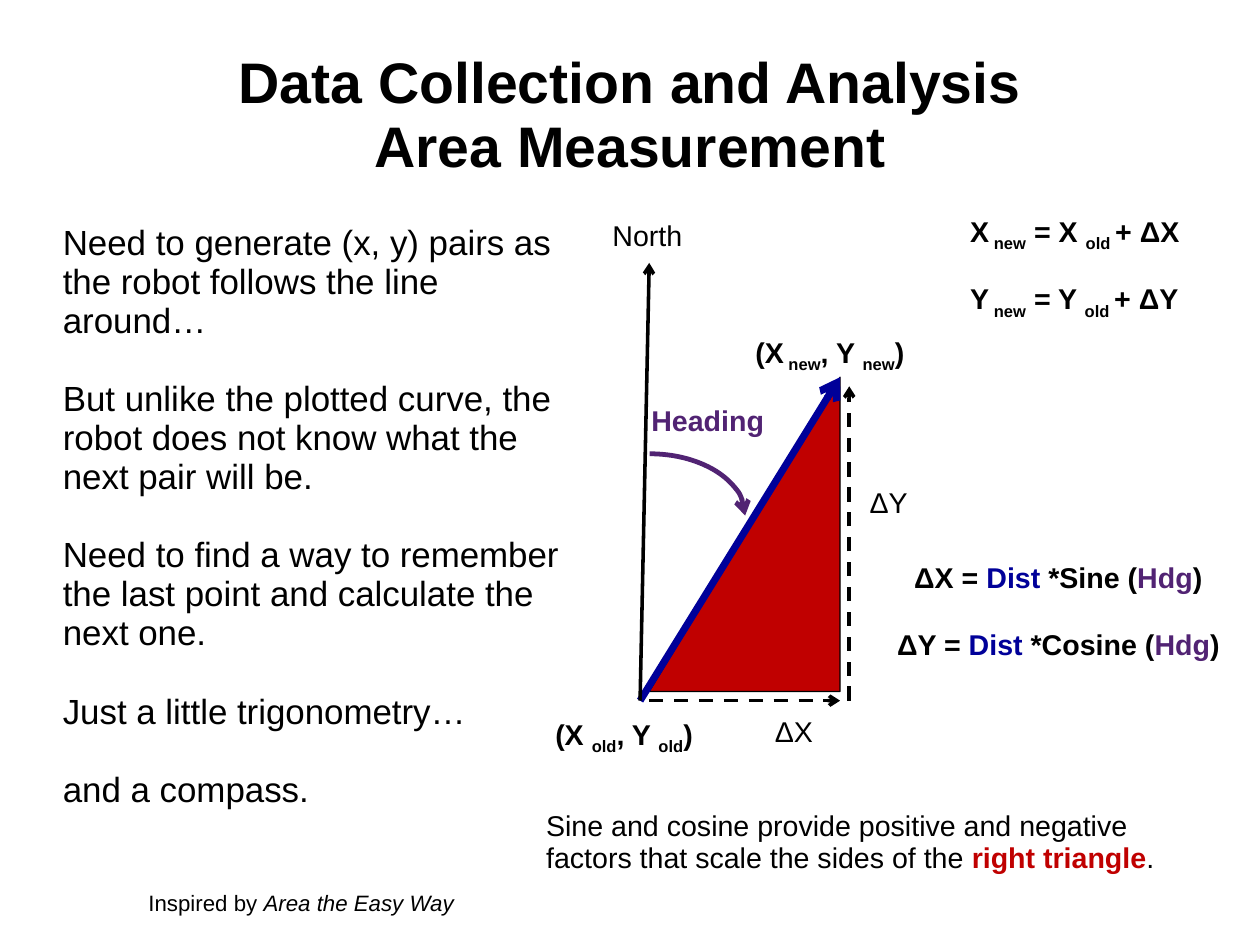
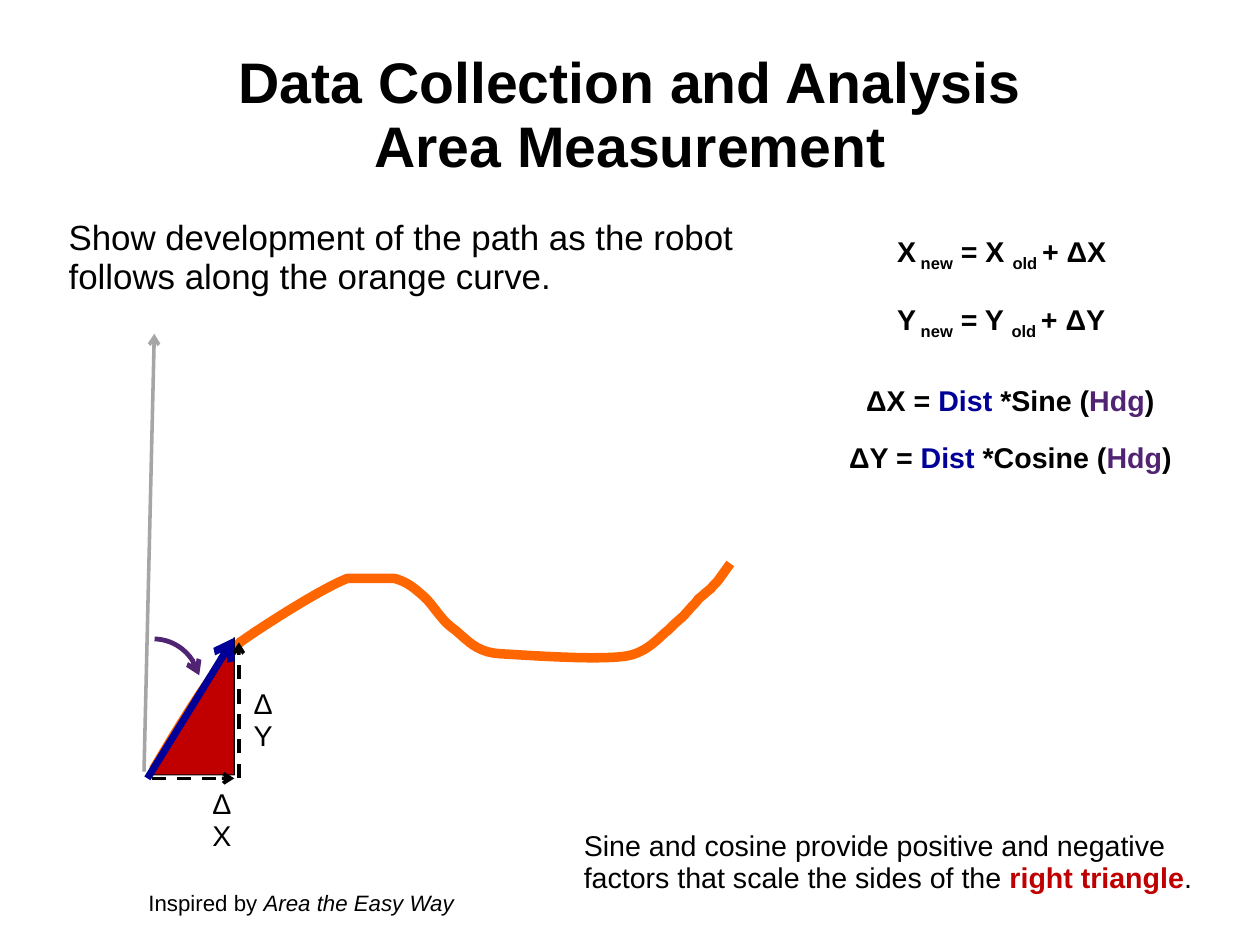
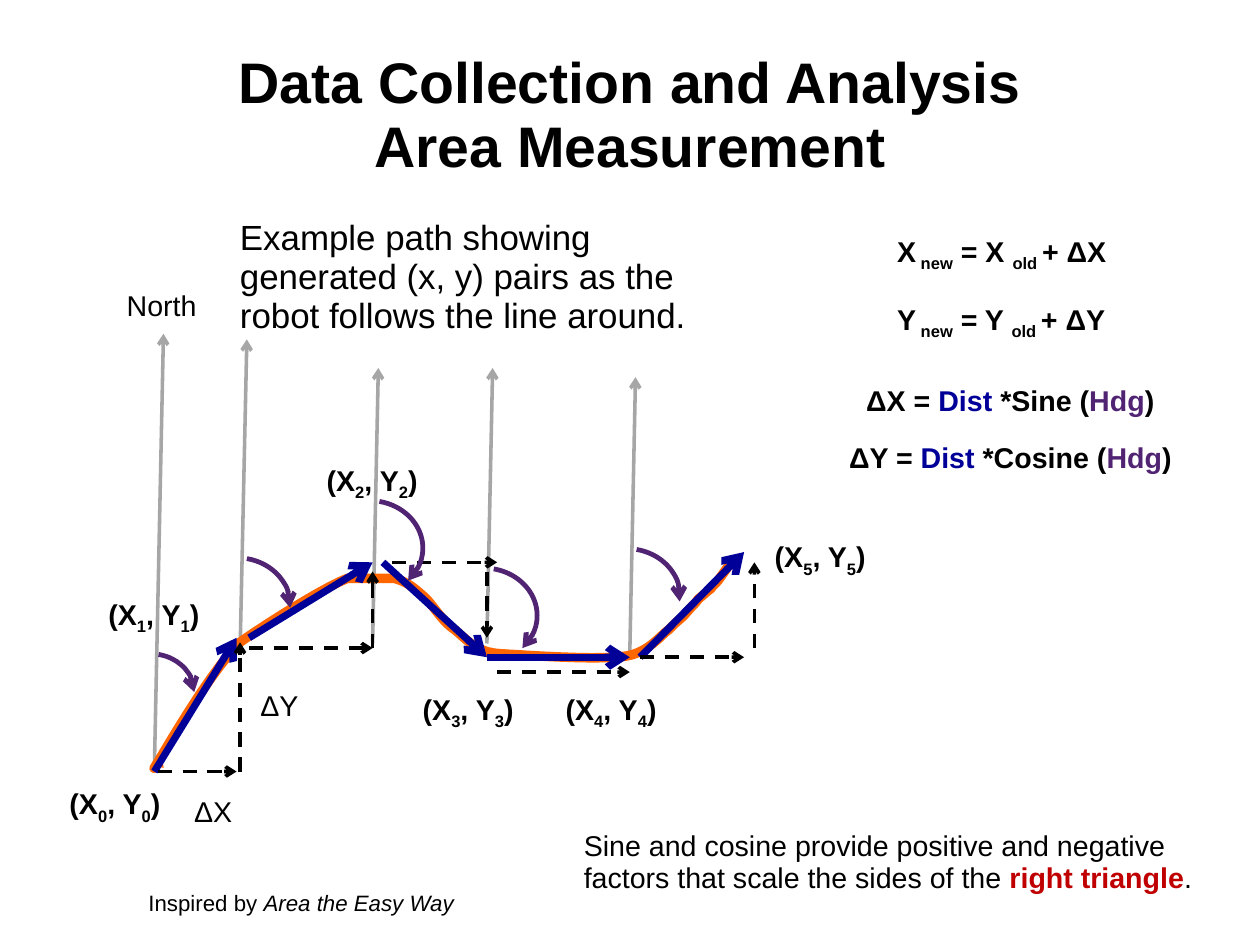
from lxml import etree
from pptx import Presentation
from pptx.dml.color import RGBColor as Rgb
from pptx.enum.dml import MSO_LINE as Dash
from pptx.enum.shapes import MSO_CONNECTOR as Link, MSO_SHAPE as Shape
from pptx.enum.text import MSO_ANCHOR as Anchor, PP_ALIGN as Align
from pptx.oxml.ns import qn
from pptx.util import Inches, Pt

# 28 by 21 cm
WIDTH, HEIGHT = Inches(28 / 2.54), Inches(21 / 2.54)
COLORS = {
    "black": "000000",
    "blue": "000099",
    "purple": "512373",
    "red": "C00000",
    "orange": "FF6600",
    "grey": "A6A6A6",
}
FONT = "Arial"
TITLE = ("Data Collection and Analysis", "Area Measurement")

# color, width in points, dashed
ARROWS = {
    "axis": ("black", 2.25, False),
    "north": ("grey", 2.25, False),
    "move": ("blue", 4.5, False),
    "delta": ("black", 2.25, True),
    "turn": ("purple", 3, False),
}

# Each part lists one point (straight) or three points (cubic curve).
START = (1.39, 6.71)
TRACK = [
    [(1.4, 6.69), (1.34, 6.73), (1.35, 6.72)],
    [(1.46, 6.54), (1.83, 5.89), (2.1, 5.62)],
    [(2.28, 5.49), (2.81, 5.15), (3.04, 5.06)],
    [(3.45, 5.06)],
    [(3.56, 5.09), (3.62, 5.14), (3.71, 5.22)],
    [(3.79, 5.29), (3.86, 5.43), (3.98, 5.51)],
    [(4.09, 5.6), (4.17, 5.71), (4.38, 5.72)],
    [(4.58, 5.73), (5.23, 5.78), (5.48, 5.74)],
    [(5.67, 5.71), (5.78, 5.56), (5.85, 5.51)],
    [(5.9, 5.46)],
    [(5.98, 5.39)],
    [(6.06, 5.3)],
    [(6.08, 5.28), (6.1, 5.26), (6.11, 5.24)],
    [(6.14, 5.22), (6.19, 5.17), (6.22, 5.15)],
    [(6.24, 5.12), (6.27, 5.1), (6.29, 5.07)],
    [(6.39, 4.93)],
]


def rgb(name):
    return Rgb.from_string(COLORS[name])


def add_run(para, text, size, color="black", bold=False, italic=False, sub=False):
    run = para.add_run()
    run.text = text
    font = run.font
    font.name, font.size, font.bold, font.italic = FONT, Pt(size), bold, italic
    font.color.rgb = rgb(color)
    if sub:
        run._r.get_or_add_rPr().set("baseline", "-25000")


def add_text(slide, box, paras, size=18, bold=False, align=Align.LEFT, gap=0,
             insets=(0.1, 0.05), anchor=Anchor.TOP):
    """Each paragraph is a list of runs: plain text or (text, style)."""
    frame = slide.shapes.add_textbox(*map(Inches, box)).text_frame
    frame.word_wrap = True
    frame.vertical_anchor = anchor
    frame.margin_left = frame.margin_right = Inches(insets[0])
    frame.margin_top = frame.margin_bottom = Inches(insets[1])
    for i, runs in enumerate(paras):
        para = frame.add_paragraph() if i else frame.paragraphs[0]
        para.alignment = align
        para.line_spacing = 0.93
        if i:
            para.space_before = Pt(gap)
        for item in runs:
            text, style = (item, {}) if isinstance(item, str) else item
            add_run(para, text, size, **{"bold": bold, **style})
    return frame


def add_title(slide):
    frame = add_text(slide, (0.55, 0.33, 9.92, 1.38), [[TITLE[0]]], 36, True,
                     Align.CENTER, insets=(0, 0), anchor=Anchor.MIDDLE)
    para = frame.paragraphs[0]
    para.add_line_break()
    add_run(para, TITLE[1], 36, bold=True)


def add_body(slide, box, *texts):
    add_text(slide, box, [[text] for text in texts], 22, gap=24.8,
             insets=(0, 0.03))


def add_label(slide, left, top, text, width=0.95, **style):
    add_text(slide, (left, top, width, 0.38), [[(text, style)]])


def sub(text):
    return text, {"sub": True}


def add_point(slide, left, top, x, x_sub, y, y_sub):
    """Label a point with its subscripted pair."""
    runs = [x, sub(x_sub), y, sub(y_sub), ")"]
    add_text(slide, (left, top, 1.83, 0.38), [runs], bold=True)


def add_sums(slide, left, top):
    rows = [[v, sub(" new"), f" = {v} ", sub("old "), f"+ Δ{v}"] for v in "XY"]
    add_text(slide, (left, top, 2.2, 1.23), rows, bold=True, gap=19.8)


def add_trig(slide, left, top, step):
    """Place the sine row, and the cosine row below and a little left."""
    for i, (axis, func) in enumerate([("X", "Sine"), ("Y", "Cosine")]):
        runs = [f"Δ{axis} = ", ("Dist", {"color": "blue"}), f" *{func} (",
                ("Hdg", {"color": "purple"}), ")"]
        box = (left - 0.15 * i, top + step * i, 3.15, 0.38)
        add_text(slide, box, [runs], bold=True)


def add_note(slide, left, top):
    runs = ["Sine and cosine provide positive and negative factors that scale "
            "the sides of the",
            (" right triangle", {"color": "red", "bold": True}), "."]
    add_text(slide, (left, top, 5.83, 0.66), [runs])


def set_line(line, color, width):
    line.color.rgb = rgb(color)
    line.width = Pt(width)


def style_arrow(shape, kind):
    color, width, dashed = ARROWS[kind]
    set_line(shape.line, color, width)
    if dashed:
        shape.line.dash_style = Dash.DASH
    ln = shape.line._get_or_add_ln()
    etree.SubElement(ln, qn("a:tailEnd")).set("type", "arrow")


def add_arrow(slide, kind, x1, y1, x2, y2):
    link = slide.shapes.add_connector(
        Link.STRAIGHT, *map(Inches, (x1, y1, x2, y2)))
    style_arrow(link, kind)
    etree.SubElement(link._element.spPr, qn("a:effectLst"))


def add_turn(slide, box, start=270, end=0):
    """Draw a heading arc between two angles in degrees."""
    arc = slide.shapes.add_shape(Shape.ARC, *map(Inches, box))
    arc.shadow.inherit = False
    arc.fill.background()
    # The preset holds 60000ths of a degree; adjustments count 100000ths.
    arc.adjustments[0] = start * 0.6
    arc.adjustments[1] = end * 0.6
    style_arrow(arc, "turn")


def add_wedge(slide, box):
    wedge = slide.shapes.add_shape(Shape.ISOSCELES_TRIANGLE, *map(Inches, box))
    wedge.adjustments[0] = 1
    wedge.shadow.inherit = False
    wedge.fill.solid()
    wedge.fill.fore_color.rgb = rgb("red")
    set_line(wedge.line, "black", 0.75)


def cubic(ends, steps=10):
    """Return points along a cubic curve, without its first point."""
    found = []
    for i in range(1, steps + 1):
        t = i / steps
        parts = ((1 - t) ** 3, 3 * t * (1 - t) ** 2, 3 * t * t * (1 - t), t ** 3)
        found.append(tuple(sum(k * end[n] for k, end in zip(parts, ends))
                           for n in (0, 1)))
    return found


def add_track(slide):
    points = [START]
    for part in TRACK:
        points += part if len(part) == 1 else cubic([points[-1], *part])
    spots = [(Inches(x), Inches(y)) for x, y in points]
    build = slide.shapes.build_freeform(*spots[0], scale=1.0)
    build.add_line_segments(spots[1:], close=False)
    track = build.convert_to_shape()
    track.shadow.inherit = False
    track.fill.background()
    set_line(track.line, "orange", 6)


def new_slide(deck):
    slide = deck.slides.add_slide(deck.slide_layouts[6])
    add_title(slide)
    credit = ["Inspired by ", ("Area the Easy Way", {"italic": True})]
    add_text(slide, (0.26, 7.75, 4.75, 0.3), [credit], 14, align=Align.CENTER)
    return slide


def add_rules(slide):
    add_sums(slide, 7.75, 2)
    add_trig(slide, 7.48, 3.33, 0.5)
    add_note(slide, 5.01, 7.22)


def show_trig(deck):
    slide = new_slide(deck)
    add_body(slide, (0.55, 1.93, 4.46, 5.45),
             "Need to generate (x, y) pairs as the robot follows the line around…",
             "But unlike the plotted curve, the robot does not know what the "
             "next pair will be.",
             "Need to find a way to remember the last point and calculate the "
             "next one.",
             "Just a little trigonometry…",
             "and a compass.")
    add_point(slide, 6.51, 2.88, "(X", " new", ", Y ", "new")
    add_wedge(slide, (5.68, 3.3, 1.67, 2.75))
    add_arrow(slide, "move", 5.6, 6.13, 7.35, 3.3)
    add_point(slide, 4.76, 6.22, "(X ", "old", ", Y ", "old")
    add_arrow(slide, "axis", 5.6, 6.13, 5.68, 2.3)
    add_label(slide, 5.26, 1.88, "North")
    add_turn(slide, (4.85, 3.97, 1.67, 1.08))
    add_label(slide, 5.6, 3.5, "Heading", 1.58, color="purple", bold=True)
    add_arrow(slide, "delta", 5.68, 6.13, 7.35, 6.13)
    add_arrow(slide, "delta", 7.43, 6.13, 7.43, 3.38)
    add_label(slide, 6.68, 6.22, "ΔX")
    add_label(slide, 7.51, 4.22, "ΔY")
    add_sums(slide, 8.39, 1.82)
    add_trig(slide, 7.9, 4.88, 0.58)
    add_note(slide, 4.68, 7.05)


def show_step(deck):
    slide = new_slide(deck)
    add_track(slide)
    add_body(slide, (0.6, 1.89, 6.75, 0.83),
             "Show development of the path as the robot follows along the "
             "orange curve.")
    add_rules(slide)
    add_wedge(slide, (1.33, 5.58, 0.72, 1.2))
    add_arrow(slide, "move", 1.29, 6.81, 2.05, 5.58)
    add_turn(slide, (0.93, 5.59, 0.83, 0.88), 271.07, 342.99)
    add_arrow(slide, "delta", 1.33, 6.81, 2.05, 6.81)
    add_arrow(slide, "delta", 2.09, 6.81, 2.09, 5.62)
    add_label(slide, 1.76, 6.85, "ΔX", 0.38)
    add_label(slide, 2.12, 5.98, "ΔY", 0.38)
    add_arrow(slide, "north", 1.26, 6.75, 1.35, 2.92)


def show_path(deck):
    slide = new_slide(deck)
    norths = [(5.51, 5.72, 5.56, 3.3), (4.26, 5.63, 4.31, 3.22),
              (3.26, 5.63, 3.31, 3.22), (2.1, 5.72, 2.16, 2.97),
              (1.35, 6.75, 1.43, 2.92)]
    moves = [(1.35, 6.75, 2.07, 5.58), (2.18, 5.58, 3.26, 4.92),
             (3.35, 4.92, 4.26, 5.75), (4.26, 5.75, 5.51, 5.75),
             (5.6, 5.75, 6.51, 4.83)]
    deltas = [(1.38, 6.75, 2.07, 6.75), (2.1, 6.75, 2.1, 5.62),
              (2.18, 5.67, 3.26, 5.67), (3.26, 5.67, 3.26, 5),
              (3.43, 4.92, 4.35, 4.92), (4.26, 5, 4.26, 5.58),
              (4.35, 5.88, 5.51, 5.88),
              (5.6, 5.75, 6.51, 5.75), (6.6, 5.67, 6.6, 4.92)]
    points = [(0.51, 6.83), (0.85, 5.17), (2.76, 4), (3.6, 6), (4.85, 6),
              (6.68, 4.67)]
    turns = [(1.6, 4.88, 2.77), (2.76, 4.38, 39.93), (3.76, 4.97, 39.93),
             (5.01, 4.8, 5.87)]

    for ends in norths:
        add_arrow(slide, "north", *ends)
    add_track(slide)
    for kind, group in (("move", moves), ("delta", deltas)):
        for ends in group:
            add_arrow(slide, kind, *ends)
    for i, (left, top) in enumerate(points):
        add_point(slide, left, top, "(X", str(i), ", Y", str(i))
    add_label(slide, 1.01, 2.5, "North")
    add_label(slide, 1.6, 6.92, "ΔX")
    add_label(slide, 2.18, 6, "ΔY")
    add_body(slide, (2.1, 1.89, 4.46, 1.33),
             "Example path showing generated (x, y) pairs as the robot follows "
             "the line around.")
    add_rules(slide)
    add_turn(slide, (0.93, 5.72, 0.77, 0.67), 282.53)
    for left, top, end in turns:
        add_turn(slide, (left, top, 0.94, 0.83), 282.53, end)


def main():
    deck = Presentation()
    deck.slide_width, deck.slide_height = WIDTH, HEIGHT
    for show in (show_trig, show_step, show_path):
        show(deck)
    deck.save("out.pptx")


if __name__ == "__main__":
    main()
